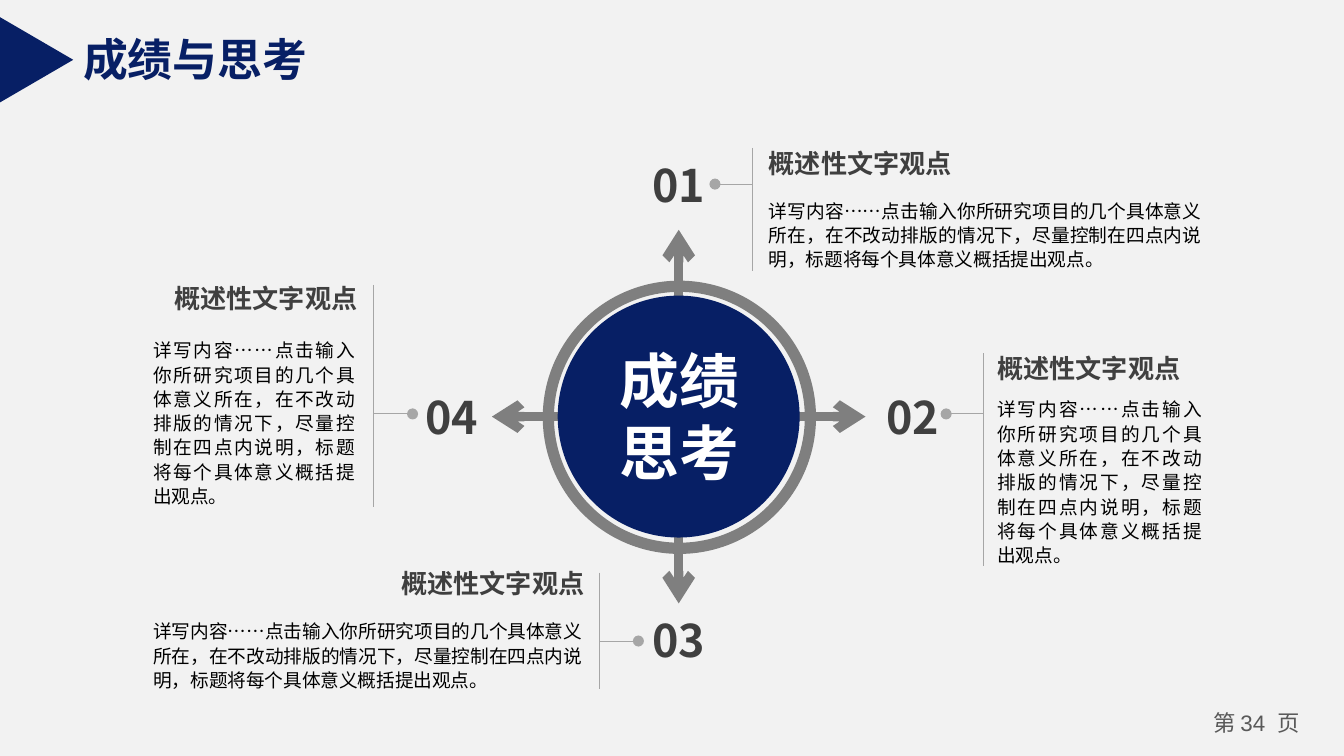
from dataclasses import dataclass

from lxml import etree
from pptx import Presentation
from pptx.dml.color import RGBColor
from pptx.enum.shapes import MSO_CONNECTOR, MSO_SHAPE
from pptx.enum.text import MSO_AUTO_SIZE, PP_ALIGN
from pptx.oxml.ns import qn
from pptx.util import Inches, Pt

TRIANGLE, OVAL = MSO_SHAPE.ISOSCELES_TRIANGLE, MSO_SHAPE.OVAL
STRAIGHT = MSO_CONNECTOR.STRAIGHT
FIT_SHAPE = MSO_AUTO_SIZE.SHAPE_TO_FIT_TEXT
LEFT, RIGHT = PP_ALIGN.LEFT, PP_ALIGN.RIGHT
CENTER, JUSTIFY = PP_ALIGN.CENTER, PP_ALIGN.JUSTIFY

COLORS = {
    "background": "F2F2F2",
    "navy": "071F65",
    "ring": "7F7F7F",
    "rule": "A6A6A6",
    "vertical heading": "3F3F3F",
    "horizontal heading": "404040",
    "body": "000000",
    "page": "595959",
    "white": "FFFFFF",
}
CJK_FONT, LATIN_FONT = "Noto Sans CJK SC", "Arial"
HEADING = "概述性文字观点"
BODY = ("详写内容……点击输入你所研究项目的几个具体意义所在，在不改动排版的情况下，"
        "尽量控制在四点内说明，标题将每个具体意义概括提出观点。")

HUB_X, HUB_Y = 5.05, 3.1
ARROW_START, ARROW_END = 0.78, 1.39
DIRECTIONS = [(0, -1), (1, 0), (0, 1), (-1, 0)]


@dataclass
class Callout:
    number: str
    color_name: str
    number_at: tuple
    heading_box: tuple
    heading_align: int
    body_box: tuple
    rule_x: float
    rule_span: tuple
    dot_at: tuple


CALLOUTS = [
    Callout("01", "vertical heading", (4.79, 1.17), (5.72, 1.1, 2.32, 0.24), LEFT,
            (5.72, 1.47, 3.22, 0.55), 5.6, (1.1, 2.02), (5.32, 1.37)),
    Callout("02", "horizontal heading", (6.53, 2.9), (7.42, 2.62, 1.52, 0.24), LEFT,
            (7.42, 2.95, 1.52, 1.28), 7.32, (2.63, 4.21), (7.04, 3.08)),
    Callout("03", "vertical heading", (4.79, 4.56), (2.83, 4.22, 1.52, 0.24), RIGHT,
            (1.14, 4.6, 3.19, 0.55), 4.46, (4.26, 5.13), (4.75, 4.77)),
    Callout("04", "horizontal heading", (3.1, 2.9), (1.14, 2.1, 1.52, 0.24), RIGHT,
            (1.14, 2.51, 1.5, 1.28), 2.78, (2.12, 3.77), (3.07, 3.08)),
]


def color(name):
    return RGBColor.from_string(COLORS[name])


def format_run(run, size, color_name, bold=False, font=CJK_FONT):
    run.font.size = Pt(size)
    run.font.bold = bold
    run.font.name = font
    run.font.color.rgb = color(color_name)
    east_asian = etree.SubElement(run._r.get_or_add_rPr(), qn("a:ea"))
    east_asian.set("typeface", CJK_FONT)


def add_text_box(slide, box, align, margins=(0, 0), wrap=True):
    """Add an empty text box; margins are (horizontal, vertical)."""
    text_frame = slide.shapes.add_textbox(*map(Inches, box)).text_frame
    text_frame.word_wrap = wrap
    text_frame.margin_left = text_frame.margin_right = Inches(margins[0])
    text_frame.margin_top = text_frame.margin_bottom = Inches(margins[1])
    text_frame.paragraphs[0].alignment = align
    return text_frame


def add_text(slide, box, text, size, color_name, align=LEFT, bold=True,
             font=CJK_FONT, **frame_options):
    text_frame = add_text_box(slide, box, align, **frame_options)
    text_frame.auto_size = FIT_SHAPE
    paragraph = text_frame.paragraphs[0]
    paragraph.text = text
    format_run(paragraph.runs[0], size, color_name, bold, font)
    return paragraph


def add_shape(slide, kind, box, fill=None, line=None, width=0):
    shape = slide.shapes.add_shape(kind, *map(Inches, box))
    shape.shadow.inherit = False
    if fill:
        shape.fill.solid()
        shape.fill.fore_color.rgb = color(fill)
    else:
        shape.fill.background()
    if line:
        shape.line.color.rgb = color(line)
        shape.line.width = Pt(width)
    else:
        shape.line.fill.background()
    return shape


def add_line(slide, start, end, color_name, width, end_mark=None):
    connector = slide.shapes.add_connector(
        STRAIGHT, *map(Inches, (*start, *end)))
    connector.line.color.rgb = color(color_name)
    connector.line.width = Pt(width)
    if end_mark:
        mark = etree.SubElement(connector.line._get_or_add_ln(), qn("a:tailEnd"))
        mark.set("type", end_mark)
    etree.SubElement(connector._element.spPr, qn("a:effectLst"))


def add_title(slide):
    add_text(slide, (0.52, 0.19, 1.88, 0.5), "成绩与思考", 24, "navy",
             font=LATIN_FONT, margins=(0.1, 0.05), wrap=False)
    marker = add_shape(slide, TRIANGLE, (-0.05, 0.17, 0.64, 0.55), "navy")
    marker.rotation = 90


def add_page_number(slide):
    text_frame = add_text_box(slide, (8.9, 5.24, 0.9, 0.3), CENTER, (0.07, 0.04))
    for text, font in [("第 ", CJK_FONT), ("34  ", LATIN_FONT), ("页", CJK_FONT)]:
        run = text_frame.paragraphs[0].add_run()
        run.text = text
        format_run(run, 12, "page", font=font)


def add_hub(slide):
    """Draw the ring, its four outward arrows and the labelled disc."""
    add_shape(slide, OVAL, (4.08, 2.13, 1.95, 1.95), line="ring", width=6)
    for dx, dy in DIRECTIONS:
        start, end = [(HUB_X + dx * reach, HUB_Y + dy * reach)
                      for reach in (ARROW_START, ARROW_END)]
        add_line(slide, start, end, "ring", 5, "arrow")
    add_shape(slide, OVAL, (HUB_X - 0.9, HUB_Y - 0.9, 1.8, 1.8), "navy")
    add_text(slide, (4.4, 2.51, 1.31, 1.18), "成绩思考", 32, "white", CENTER,
             margins=(0.1, 0.05))


def add_callout(slide, callout):
    add_text(slide, (*callout.number_at, 0.52, 0.4), callout.number, 24,
             callout.color_name, CENTER)
    add_text(slide, callout.heading_box, HEADING, 14, callout.color_name,
             callout.heading_align)
    body = add_text(slide, callout.body_box, BODY, 10, "body", JUSTIFY, bold=False)
    body.line_spacing = Pt(13)
    top, bottom = callout.rule_span
    add_line(slide, (callout.rule_x, top), (callout.rule_x, bottom), "rule", 0.5)
    add_line(slide, (callout.rule_x, callout.dot_at[1]), callout.dot_at,
             "rule", 0.5, "oval")


def main():
    presentation = Presentation()
    presentation.slide_width = Inches(10)
    presentation.slide_height = Inches(10 * 9 / 16)
    slide = presentation.slides.add_slide(presentation.slide_layouts[6])
    slide.background.fill.solid()
    slide.background.fill.fore_color.rgb = color("background")
    add_page_number(slide)
    add_title(slide)
    add_hub(slide)
    for callout in CALLOUTS:
        add_callout(slide, callout)
    presentation.save("out.pptx")


if __name__ == "__main__":
    main()
